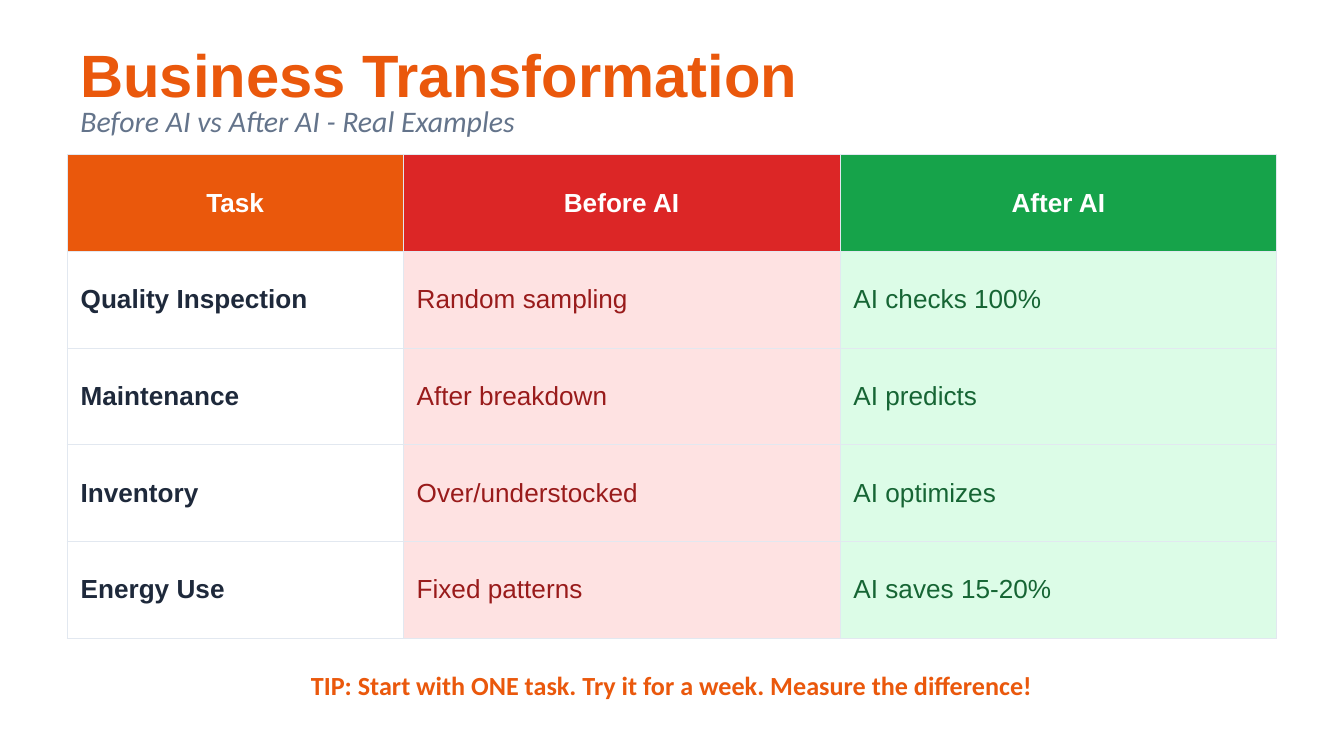
from dataclasses import dataclass

from lxml.etree import SubElement
from pptx import Presentation
from pptx.dml.color import RGBColor
from pptx.enum.text import MSO_ANCHOR, PP_ALIGN
from pptx.oxml.ns import qn
from pptx.util import Inches, Pt


@dataclass(frozen=True)
class Theme:
    """Colours, fonts and type sizes of the slide."""
    accent: str = "EA580C"
    muted: str = "64748B"
    ink: str = "1E293B"
    white: str = "FFFFFF"
    before: str = "DC2626"
    before_tint: str = "FEE2E2"
    before_ink: str = "991B1B"
    after: str = "16A34A"
    after_tint: str = "DCFCE7"
    after_ink: str = "166534"
    border: str = "E2E8F0"
    border_width: float = 0.5
    heading_font: str = "Arial"
    note_font: str = "Calibri"
    title_size: int = 32
    subtitle_size: int = 16
    body_size: int = 14


@dataclass(frozen=True)
class Column:
    """One table column: its width in grid columns, texts and colours."""
    span: int
    texts: tuple
    header_fill: str
    body_fill: str | None
    ink: str
    bold: bool = False


def write(frame, text, *, font, size, color, bold=False, italic=False, align=PP_ALIGN.LEFT):
    """Put one formatted paragraph into a text frame."""
    paragraph = frame.paragraphs[0]
    paragraph.alignment = align
    run = paragraph.add_run()
    run.text = text
    run.font.name = font
    run.font.size = Pt(size)
    run.font.bold = bold
    run.font.italic = italic
    run.font.color.rgb = RGBColor.from_string(color)


class Deck:
    """Draws styled elements on a grid of 0.25 by 0.05 inch units."""

    margin, width = 2, 36

    def __init__(self, theme):
        """Open a 16:9 presentation with one blank slide."""
        self.theme = theme
        self.presentation = Presentation()
        self.presentation.slide_width = Inches(10)
        self.presentation.slide_height = Inches(10 * 9 / 16)
        self.slide = self.presentation.slides.add_slide(self.presentation.slide_layouts[6])

    def area(self, row, rows):
        """Return the full-width area that starts at a grid row."""
        return (self.across(self.margin), self.down(row),
                self.across(self.width), self.down(rows))

    def across(self, columns):
        """Turn grid columns into a length."""
        return Inches(columns * 0.25)

    def down(self, rows):
        """Turn grid rows into a length."""
        return Inches(rows * 0.05)

    def text(self, row, rows, text, **style):
        """Add a full-width line of text."""
        frame = self.slide.shapes.add_textbox(*self.area(row, rows)).text_frame
        frame.word_wrap = True
        frame.vertical_anchor = MSO_ANCHOR.MIDDLE
        write(frame, text, **style)

    def table(self, row, rows, columns):
        """Add a full-width table with equal rows."""
        count = len(columns[0].texts)
        table = self.slide.shapes.add_table(count, len(columns), *self.area(row, rows)).table
        table.horz_banding = False
        for table_row in table.rows:
            table_row.height = self.down(rows / count)
        for x, column in enumerate(columns):
            table.columns[x].width = self.across(column.span)
            for y, text in enumerate(column.texts):
                self.cell(table.cell(y, x), text, column, y == 0)

    def cell(self, cell, text, column, header):
        """Fill, border and write one table cell."""
        cell.vertical_anchor = MSO_ANCHOR.MIDDLE
        self.border(cell)
        fill = column.header_fill if header else column.body_fill
        if fill:
            cell.fill.solid()
            cell.fill.fore_color.rgb = RGBColor.from_string(fill)
        else:
            cell.fill.background()
        write(cell.text_frame, text, font=self.theme.heading_font, size=self.theme.body_size,
              color=self.theme.white if header else column.ink,
              bold=header or column.bold,
              align=PP_ALIGN.CENTER if header else PP_ALIGN.LEFT)

    def border(self, cell):
        """Draw thin lines on all four sides of a cell."""
        properties = cell._tc.get_or_add_tcPr()
        for side in ("a:lnL", "a:lnR", "a:lnT", "a:lnB"):
            line = SubElement(properties, qn(side), w=str(Pt(self.theme.border_width)))
            SubElement(SubElement(line, qn("a:solidFill")), qn("a:srgbClr"), val=self.theme.border)


def main():
    """Build the slide and save it."""
    theme = Theme()
    deck = Deck(theme)
    deck.text(6, 10, "Business Transformation", font=theme.heading_font,
              size=theme.title_size, color=theme.accent, bold=True)
    deck.text(15, 6, "Before AI vs After AI - Real Examples", font=theme.note_font,
              size=theme.subtitle_size, color=theme.muted, italic=True)
    task = Column(10, ("Task", "Quality Inspection", "Maintenance", "Inventory", "Energy Use"),
                  theme.accent, None, theme.ink, bold=True)
    before = Column(13, ("Before AI", "Random sampling", "After breakdown",
                         "Over/understocked", "Fixed patterns"),
                    theme.before, theme.before_tint, theme.before_ink)
    after = Column(13, ("After AI", "AI checks 100%", "AI predicts",
                        "AI optimizes", "AI saves 15-20%"),
                   theme.after, theme.after_tint, theme.after_ink)
    deck.table(23, 72, (task, before, after))
    deck.text(98, 8, "TIP: Start with ONE task. Try it for a week. Measure the difference!",
              font=theme.note_font, size=theme.body_size, color=theme.accent,
              bold=True, align=PP_ALIGN.CENTER)
    deck.presentation.save("out.pptx")


if __name__ == "__main__":
    main()
